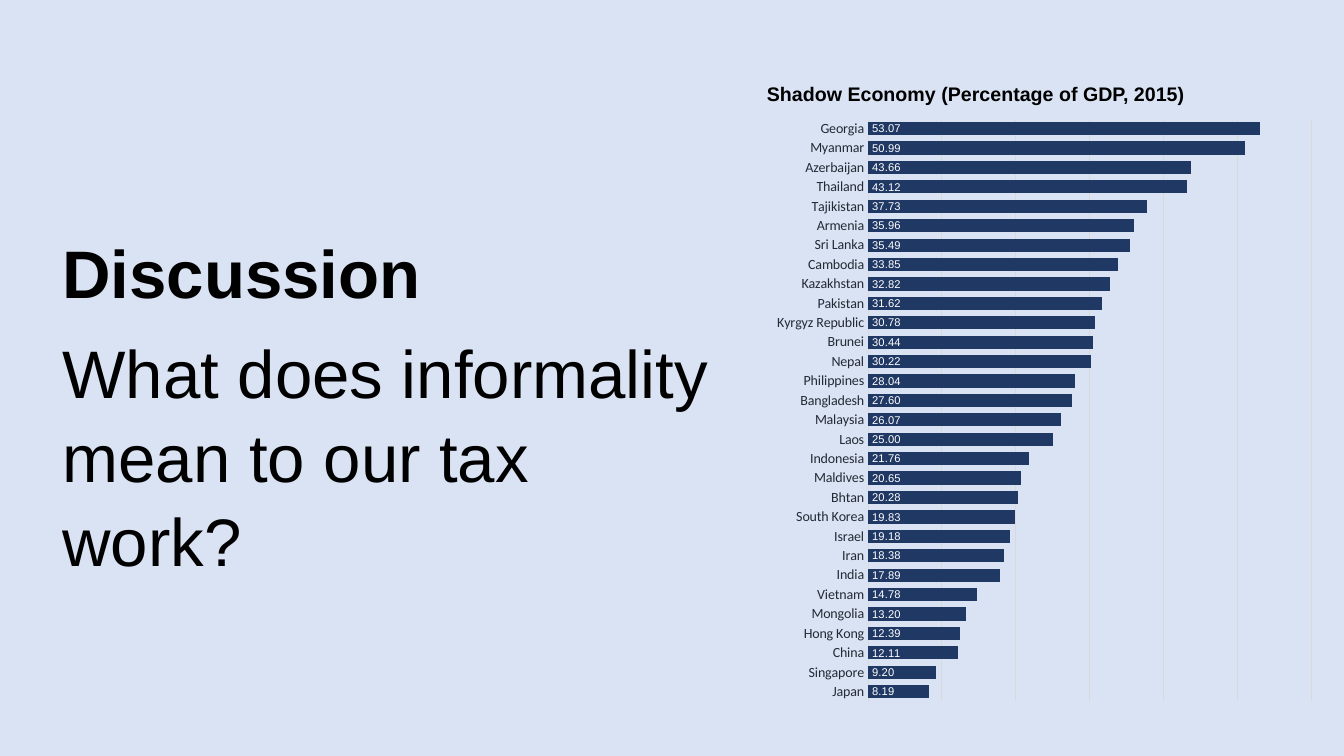
import pptx
import pptx.chart.data
import pptx.dml.color
import pptx.enum.chart
import pptx.enum.text
import pptx.util

Pt = pptx.util.Pt

COLORS = {
    "background": "DAE3F3",
    "text": "000000",
    "axis_text": "222A35",
    "grid": "D9D9D9",
    "bar": "203864",
    "bar_label": "FFFFFF",
}
HEADING = "Discussion"
QUESTION = "What does informality mean to our tax work?"
CHART_TITLE = "Shadow Economy (Percentage of GDP, 2015)"
SHADOW_ECONOMY = {
    "Japan": 8.19, "Singapore": 9.20, "China": 12.11, "Hong Kong": 12.39,
    "Mongolia": 13.20, "Vietnam": 14.78, "India": 17.89, "Iran": 18.38,
    "Israel": 19.18, "South Korea": 19.83, "Bhtan": 20.28, "Maldives": 20.65,
    "Indonesia": 21.76, "Laos": 25.00, "Malaysia": 26.07, "Bangladesh": 27.60,
    "Philippines": 28.04, "Nepal": 30.22, "Brunei": 30.44,
    "Kyrgyz Republic": 30.78, "Pakistan": 31.62, "Kazakhstan": 32.82,
    "Cambodia": 33.85, "Sri Lanka": 35.49, "Armenia": 35.96,
    "Tajikistan": 37.73, "Thailand": 43.12, "Azerbaijan": 43.66,
    "Myanmar": 50.99, "Georgia": 53.07,
}


def color(name):
    return pptx.dml.color.RGBColor.from_string(COLORS[name])


def set_font(font, family, size, color_name, bold=False):
    font.name = family
    font.size = Pt(size)
    font.bold = bold
    font.color.rgb = color(color_name)


def set_line(line):
    line.color.rgb = color("grid")
    line.width = Pt(0.75)


def add_discussion(slide):
    title = slide.shapes.title
    title.left, title.top, title.width, title.height = Pt(37.4), Pt(159), Pt(477), Pt(249)
    frame = title.text_frame
    frame.word_wrap = True
    frame.auto_size = pptx.enum.text.MSO_AUTO_SIZE.NONE
    frame.vertical_anchor = pptx.enum.text.MSO_ANCHOR.TOP
    frame.text = HEADING
    frame.add_paragraph().text = QUESTION
    for paragraph, bold, space_after in zip(frame.paragraphs, (True, False), (12, 0)):
        paragraph.alignment = pptx.enum.text.PP_ALIGN.LEFT
        paragraph.line_spacing = 1.04
        paragraph.space_before = Pt(0)
        paragraph.space_after = Pt(space_after)
        set_font(paragraph.runs[0].font, "Arial", 48, "text", bold)


def add_chart_title(slide):
    box = slide.shapes.add_textbox(Pt(540.7), Pt(54.7), Pt(416), Pt(24.5))
    box.text_frame.word_wrap = True
    box.text_frame.text = CHART_TITLE
    set_font(box.text_frame.paragraphs[0].runs[0].font, "Arial", 14, "text", True)


def add_economy_chart(slide):
    data = pptx.chart.data.CategoryChartData()
    data.categories = list(SHADOW_ECONOMY)
    data.add_series("Series 1", list(SHADOW_ECONOMY.values()))
    chart = slide.shapes.add_chart(
        pptx.enum.chart.XL_CHART_TYPE.BAR_CLUSTERED,
        Pt(547.2), Pt(76.3), Pt(397.4), Pt(433.4), data).chart
    chart.has_legend = False
    chart.has_title = False
    set_font(chart.font, "Calibri", 10, "text")

    countries = chart.category_axis
    countries.major_tick_mark = pptx.enum.chart.XL_TICK_MARK.NONE
    countries.has_major_gridlines = False
    set_font(countries.tick_labels.font, "Calibri", 10, "axis_text")
    set_line(countries.format.line)

    percentages = chart.value_axis
    percentages.minimum_scale, percentages.maximum_scale = 0, 60
    percentages.major_unit = 10
    percentages.has_major_gridlines = True
    set_line(percentages.major_gridlines.format.line)
    percentages.visible = False

    plot = chart.plots[0]
    plot.gap_width = 47
    plot.vary_by_categories = False
    fill = plot.series[0].format.fill
    fill.solid()
    fill.fore_color.rgb = color("bar")
    labels = plot.series[0].data_labels
    labels.show_value = True
    labels.number_format = "#,##0.00"
    labels.number_format_is_linked = False
    labels.position = pptx.enum.chart.XL_LABEL_POSITION.INSIDE_BASE
    set_font(labels.font, "Arial", 8, "bar_label")


def main():
    presentation = pptx.Presentation()
    presentation.slide_width, presentation.slide_height = Pt(960), Pt(540)
    slide = presentation.slides.add_slide(presentation.slide_layouts[5])
    slide.background.fill.solid()
    slide.background.fill.fore_color.rgb = color("background")
    add_chart_title(slide)
    add_economy_chart(slide)
    add_discussion(slide)
    presentation.save("out.pptx")


if __name__ == "__main__":
    main()
